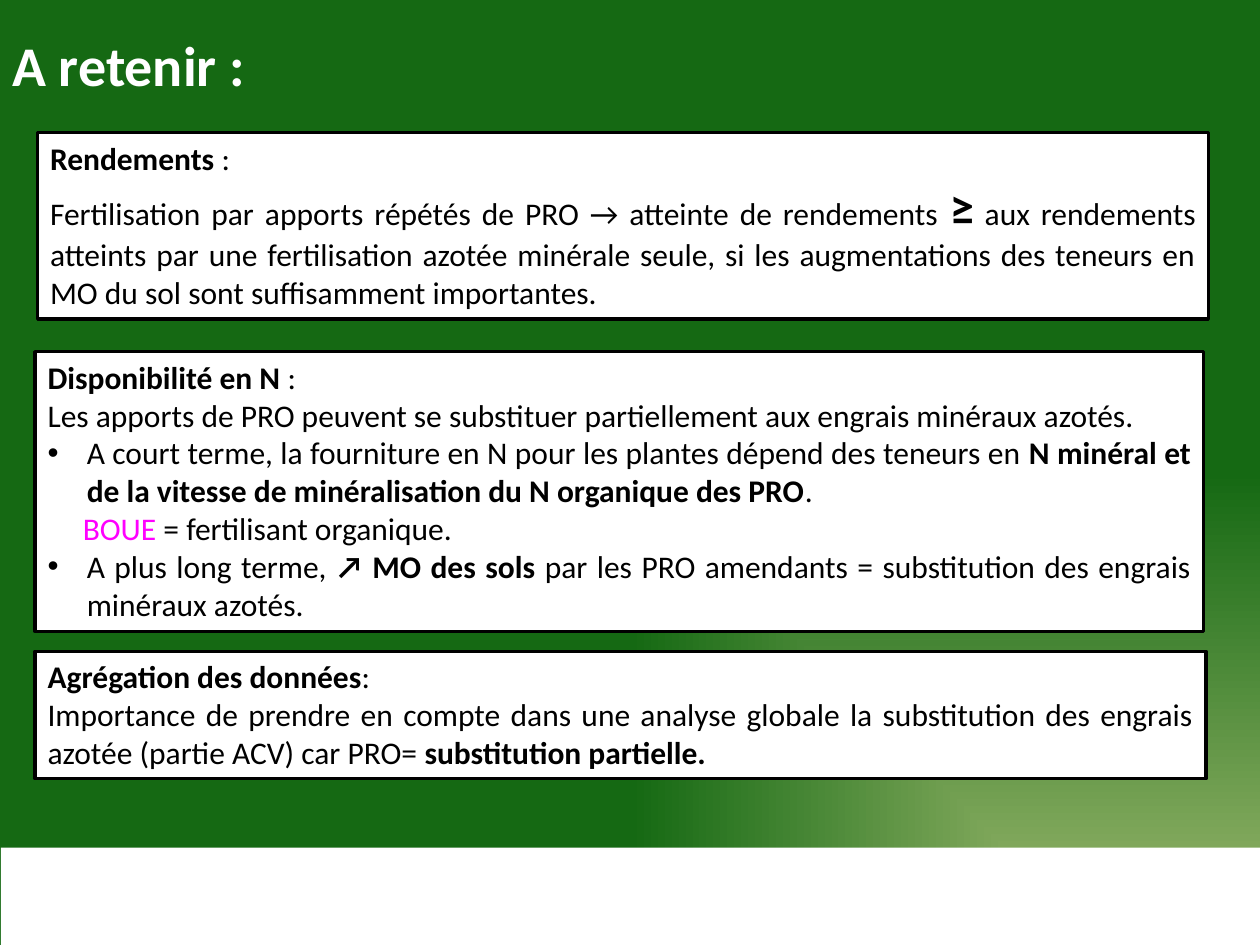
"""Build the "A retenir" summary slide with three framed text boxes."""
from pptx import Presentation
from pptx.dml.color import RGBColor
from pptx.enum.shapes import MSO_SHAPE
from pptx.enum.text import MSO_ANCHOR, MSO_AUTO_SIZE, PP_ALIGN
from pptx.oxml import parse_xml
from pptx.oxml.ns import nsdecls
from pptx.util import Cm, Pt

RECTANGLE = MSO_SHAPE.RECTANGLE
MIDDLE, TOP = MSO_ANCHOR.MIDDLE, MSO_ANCHOR.TOP
GROW, FIXED = MSO_AUTO_SIZE.SHAPE_TO_FIT_TEXT, MSO_AUTO_SIZE.NONE
LEFT, JUSTIFY = PP_ALIGN.LEFT, PP_ALIGN.JUSTIFY

WHITE, BLACK, MAGENTA = "FFFFFF", "000000", "FF00FF"
GRADIENT = [(0, "DDEBCF"), (0, "9CB86E"), (100, "156913")]
BASE = {"name": "Calibri", "size": 18, "bold": False, "color": BLACK}
BOLD = {"bold": True}
BULLET_INDENT, PLAIN_INDENT = 0.79, 0.71

TITLE = [("plain", [("A retenir :", {"size": 32, "bold": True, "color": WHITE})])]
TITLE_PLACE = (0, -0.08, 25.1, 2.74)
FOOTER_PLACE = (0.02, 17.09, 25.38, 1.96)

BOXES = [
    ((0.76, 2.67, 23.6, 3.76), [
        ("plain", [("Rendements ", BOLD), (":", {})]),
        ("plain", [
            ("Fertilisation par apports répétés de PRO → atteinte de rendements ", {}),
            ("≥", {"size": 28, "bold": True}),
            (" aux rendements atteints par une fertilisation azotée minérale seule, "
             "si les augmentations des teneurs en MO du sol sont suffisamment "
             "importantes.", {}),
        ]),
    ]),
    ((0.71, 7.09, 23.55, 5.64), [
        ("plain", [("Disponibilité en N ", BOLD), (":", {})]),
        ("plain", [("Les apports de PRO peuvent se substituer partiellement aux "
                    "engrais minéraux azotés.", {})]),
        ("bullet", [
            ("A court terme, la fourniture en N pour les plantes dépend des "
             "teneurs en ", {}),
            ("N minéral et de la vitesse de minéralisation du N organique des PRO", BOLD),
            (".", {}),
        ]),
        ("indent", [("BOUE", {"color": MAGENTA}), (" = fertilisant organique.", {})]),
        ("bullet", [
            ("A plus long terme, ", {}),
            ("↗ MO des sols ", BOLD),
            ("par les PRO amendants = substitution des engrais minéraux azotés.", {}),
        ]),
    ]),
    ((0.71, 13.13, 23.6, 2.57), [
        ("plain", [("Agrégation des données", BOLD), (":", {})]),
        ("plain", [
            ("Importance de prendre en compte dans une analyse globale la "
             "substitution des engrais azotée (partie ACV) car PRO= ", {}),
            ("substitution partielle.", BOLD),
        ]),
    ]),
]


def rgb(value):
    return RGBColor.from_string(value)


def set_attributes(target, values):
    for name, value in values.items():
        setattr(target, name, value)


def set_background(page):
    stops = "".join(
        f'<a:gs pos="{position * 1000}"><a:srgbClr val="{color}"/></a:gs>'
        for position, color in GRADIENT)
    background = parse_xml(
        f'<p:bg {nsdecls("p", "a")}><p:bgPr><a:gradFill rotWithShape="1">'
        f'<a:gsLst>{stops}</a:gsLst><a:path path="rect">'
        '<a:fillToRect l="100000" t="100000"/></a:path></a:gradFill>'
        '<a:effectLst/></p:bgPr></p:bg>')
    page.element.cSld.insert(0, background)


def set_indent(para, kind):
    properties = para._p.get_or_add_pPr()
    if kind == "indent":
        properties.set("marL", str(Cm(PLAIN_INDENT)))
    if kind == "bullet":
        properties.set("marL", str(Cm(BULLET_INDENT)))
        properties.set("indent", str(-Cm(BULLET_INDENT)))
        for xml in ('<a:buFont {} typeface="Arial"/>', '<a:buChar {} char="•"/>'):
            properties.append(parse_xml(xml.format(nsdecls("a"))))


def write_text(frame, paragraphs, alignment):
    for index, (kind, spans) in enumerate(paragraphs):
        para = frame.paragraphs[0] if index == 0 else frame.add_paragraph()
        set_indent(para, kind)
        para.alignment = alignment
        for text, changes in spans:
            span = para.add_run()
            span.text = text
            style = {**BASE, **changes}
            span.font.color.rgb = rgb(style.pop("color"))
            style["size"] = Pt(style["size"])
            set_attributes(span.font, style)


def add_panel(page, place):
    panel = page.shapes.add_shape(RECTANGLE, *map(Cm, place))
    panel.shadow.inherit = False
    panel.fill.solid()
    panel.fill.fore_color.rgb = rgb(WHITE)
    return panel


def main():
    deck = Presentation()
    set_attributes(deck, {"slide_width": Cm(25.4), "slide_height": Cm(19.05)})
    page = deck.slides.add_slide(deck.slide_layouts[6])
    set_background(page)

    add_panel(page, FOOTER_PLACE).line.fill.background()

    title = page.shapes.add_textbox(*map(Cm, TITLE_PLACE)).text_frame
    set_attributes(title, {"word_wrap": True, "auto_size": FIXED,
                           "vertical_anchor": MIDDLE})
    write_text(title, TITLE, LEFT)

    for place, paragraphs in BOXES:
        box = add_panel(page, place)
        box.line.color.rgb = rgb(BLACK)
        box.line.width = Pt(2)
        set_attributes(box.text_frame, {"word_wrap": True, "auto_size": GROW,
                                        "vertical_anchor": TOP})
        write_text(box.text_frame, paragraphs, JUSTIFY)

    deck.save("out.pptx")


if __name__ == "__main__":
    main()
